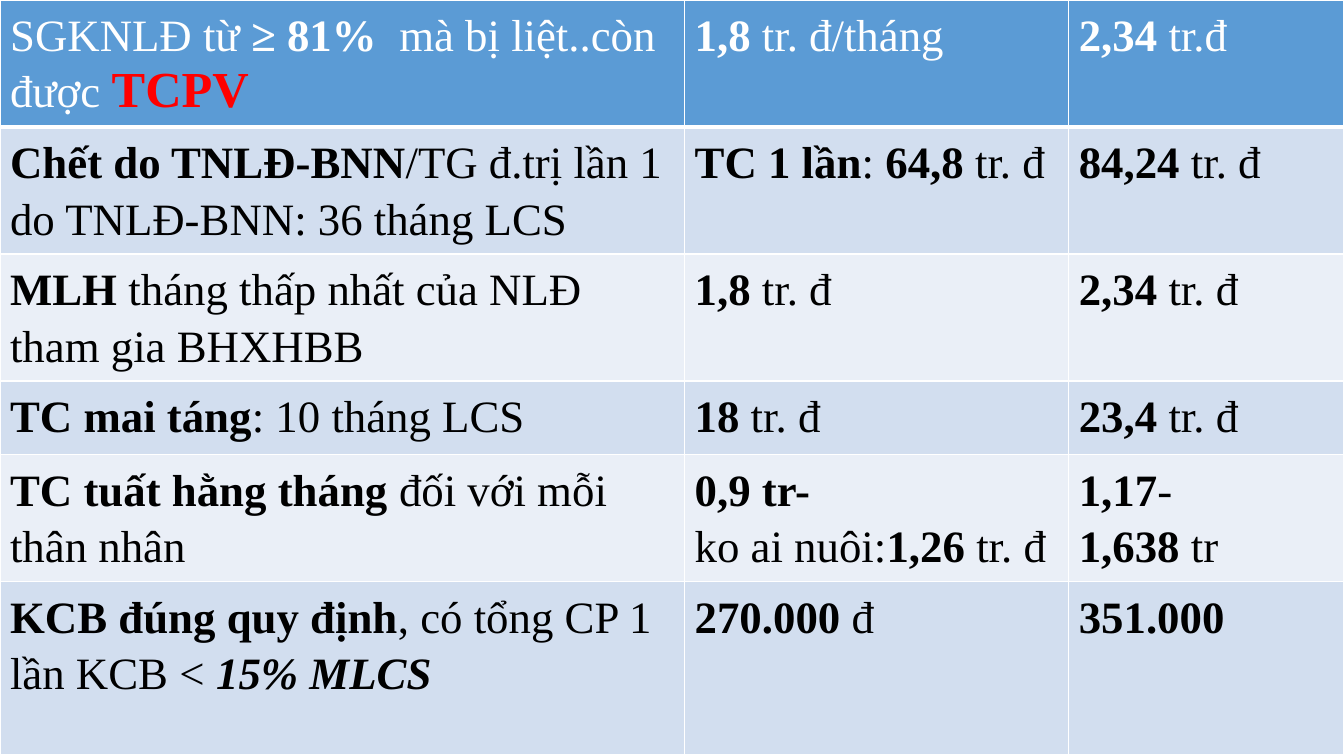
from lxml import etree
from pptx import Presentation
from pptx.dml.color import RGBColor
from pptx.oxml.ns import qn
from pptx.util import Inches, Pt

SLIDE_WIDTH, SLIDE_HEIGHT = 13.33, 7.5
COLUMN_WIDTHS = [6.79, 3.81, 2.73]
ROW_HEIGHTS = [1.26, 1.26, 1.26, 0.73, 1.26, 1.72]

PLAIN, BOLD, BOLD_ITALIC, ALERT = "plain", "bold", "bold italic", "alert"

# Rows hold cells, cells hold paragraphs, paragraphs hold (text, style) runs.
BENEFIT_ROWS = [
    [
        [[("SGKNLĐ từ ", PLAIN), ("≥ 81% ", BOLD),
          (" mà bị liệt..còn được ", PLAIN), ("TCPV", ALERT)]],
        [[("1,8 ", BOLD), ("tr. đ/tháng", PLAIN)]],
        [[("2,34", BOLD), (" tr.đ", PLAIN)]],
    ],
    [
        [[("Chết do TNLĐ-BNN", BOLD),
          ("/TG đ.trị lần 1 do TNLĐ-BNN: 36 tháng LCS", PLAIN)]],
        [[("TC 1 lần", BOLD), (": ", PLAIN), ("64,8", BOLD), (" tr. đ", PLAIN)]],
        [[("84,24", BOLD), (" tr. đ", PLAIN)]],
    ],
    [
        [[("MLH", BOLD), (" tháng thấp nhất của NLĐ tham gia BHXHBB", PLAIN)]],
        [[("1,8", BOLD), (" tr. đ", PLAIN)]],
        [[("2,34 ", BOLD), ("tr. đ", PLAIN)]],
    ],
    [
        [[("TC mai táng", BOLD), (": 10 tháng LCS", PLAIN)]],
        [[("18", BOLD), (" tr. đ", PLAIN)]],
        [[("23,4", BOLD), (" tr. đ", PLAIN)]],
    ],
    [
        [[("TC tuất hằng tháng", BOLD), (" đối với mỗi thân nhân", PLAIN)]],
        [[("0,9 tr-", BOLD)],
         [("ko ai nuôi:", PLAIN), ("1,26", BOLD), (" tr. đ", PLAIN)]],
        [[("1,17", BOLD), ("-", PLAIN)], [("1,638", BOLD), (" tr", PLAIN)]],
    ],
    [
        [[("KCB đúng quy định", BOLD), (", có tổng CP 1 lần KCB < ", PLAIN),
          ("15% MLCS", BOLD_ITALIC)]],
        [[("270.000", BOLD), (" đ", PLAIN)]],
        [[("351.000", BOLD)]],
    ],
]


def color(value):
    return RGBColor.from_string(value)


class SlideBuilder:
    font_name = "Times New Roman"
    text_size, alert_size, line_spacing = 32, 36, 40.4
    header_fill, band_fills = "5B9BD5", ("D2DEEF", "EAEFF7")
    header_text, body_text, alert_text = "FFFFFF", "000000", "FF0000"
    border_color, border_width, header_rule_width = "FFFFFF", 1, 3

    def __init__(self, slide):
        self.slide = slide

    def add_table(self, rows, column_widths, row_heights):
        table = self.slide.shapes.add_table(
            len(rows), len(column_widths), Inches(0), Inches(0),
            Inches(SLIDE_WIDTH), Inches(SLIDE_HEIGHT)).table
        for column, width in zip(table.columns, column_widths):
            column.width = Inches(width)
        for row_index, (row, height) in enumerate(zip(table.rows, row_heights)):
            row.height = Inches(height)
            for cell, paragraphs in zip(row.cells, rows[row_index]):
                self.format_cell(cell, row_index)
                self.write_cell(cell, paragraphs, row_index == 0)

    def format_cell(self, cell, row_index):
        """Give the cell its borders, with a thick rule under the header, and its band fill."""
        top = self.header_rule_width if row_index == 1 else self.border_width
        bottom = self.header_rule_width if row_index == 0 else self.border_width
        self.add_border(cell, "a:lnL", self.border_width)
        self.add_border(cell, "a:lnR", self.border_width)
        self.add_border(cell, "a:lnT", top)
        self.add_border(cell, "a:lnB", bottom)
        fill = self.band_fills[(row_index - 1) % 2] if row_index else self.header_fill
        cell.fill.solid()
        cell.fill.fore_color.rgb = color(fill)

    def add_border(self, cell, tag, width):
        properties = cell._tc.get_or_add_tcPr()
        line = etree.SubElement(properties, qn(tag), w=str(Pt(width)))
        fill = etree.SubElement(line, qn("a:solidFill"))
        etree.SubElement(fill, qn("a:srgbClr"), val=self.border_color)

    def write_cell(self, cell, paragraphs, is_header):
        text_frame = cell.text_frame
        for index, runs in enumerate(paragraphs):
            paragraph = text_frame.add_paragraph() if index else text_frame.paragraphs[0]
            paragraph.line_spacing = Pt(self.line_spacing)
            for text, style in runs:
                run = paragraph.add_run()
                run.text = text
                self.format_run(run, style, is_header)

    def format_run(self, run, style, is_header):
        font = run.font
        font.name = self.font_name
        font.size = Pt(self.alert_size if style == ALERT else self.text_size)
        font.bold = style != PLAIN
        font.italic = style == BOLD_ITALIC
        base_color = self.header_text if is_header else self.body_text
        font.color.rgb = color(self.alert_text if style == ALERT else base_color)


def main():
    presentation = Presentation()
    presentation.slide_width = Inches(SLIDE_WIDTH)
    presentation.slide_height = Inches(SLIDE_HEIGHT)
    slide = presentation.slides.add_slide(presentation.slide_layouts[6])
    SlideBuilder(slide).add_table(BENEFIT_ROWS, COLUMN_WIDTHS, ROW_HEIGHTS)
    presentation.save("out.pptx")


if __name__ == "__main__":
    main()
